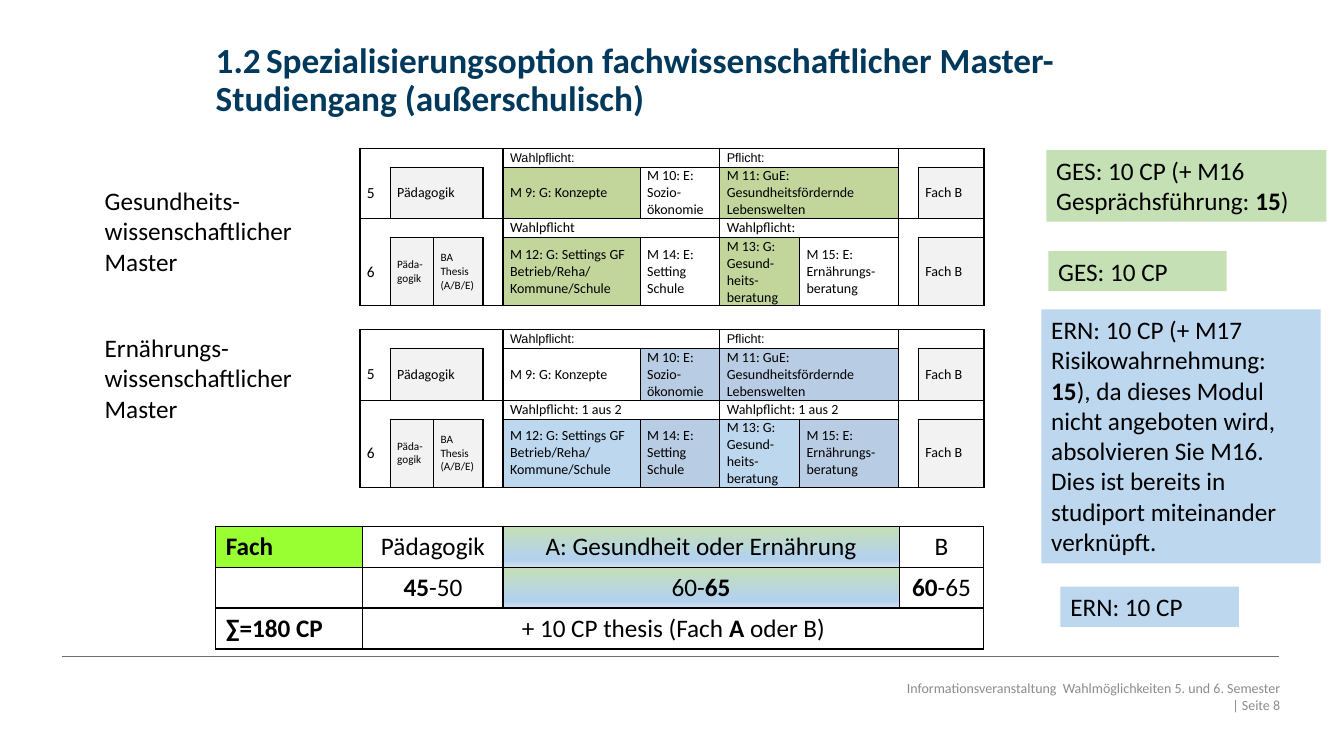
import pptx
import pptx.util
import pptx.dml.color
import pptx.enum.dml
import pptx.enum.shapes
import pptx.enum.text
import pptx.oxml
import pptx.oxml.ns
from lxml import etree

WIDE = pptx.util.Inches(13.333)
HIGH = pptx.util.Inches(7.5)
ALIGN = pptx.enum.text.PP_ALIGN
MIDDLE = pptx.enum.text.MSO_ANCHOR.MIDDLE
BLACK, GREY = "000000", "F2F2F2"
GREEN, OLIVE, SKY, STEEL = "C5E0B4", "C2D69B", "BDD7EE", "B8CCE4"
BLEND = ((0, GREEN), (74, "B5D2EC"), (83, "B5D2EC"), (100, "CEE1F2"))
MODULE_COLS = (2.25, 3.23, 3.68, 1.5, 10.2, 5.93, 5.93, 7.35, 1.5, 4.88)
MODULE_ROWS = (2.53, 6.8, 2.53, 9)
SUM_COLS = (10.95, 10.43, 29.48, 6.3)
SUM_ROWS = (5.42,) * 3
SPANS = ((0, 1), (0, 4), (0, 6), (1, 1), (1, 6), (2, 1), (2, 4), (2, 6))
EDGES = (
    {0: "LT", 1: "TB", 2: "TB", 3: "TR", 8: "LT", 9: "TRB"},
    {0: "LRB", 3: "LRB", 8: "LRB"},
)
MODULES = {
    (1, 0): "5",
    (1, 1): "Pädagogik",
    (1, 4): "M 9: G: Konzepte",
    (1, 5): "M 10: E: Sozio-ökonomie",
    (1, 6): "M 11: GuE: Gesundheitsfördernde Lebenswelten",
    (1, 9): "Fach B",
    (3, 0): "6",
    (3, 1): "Päda-gogik",
    (3, 2): "BA Thesis (A/B/E)",
    (3, 4): "M 12: G: Settings GF Betrieb/Reha/\nKommune/Schule",
    (3, 5): "M 14: E: Setting Schule",
    (3, 6): "M 13: G: Gesund-heits-beratung",
    (3, 7): "M 15: E: Ernährungs-beratung",
    (3, 9): "Fach B",
}
SIZES = {(1, 0): 11, (3, 0): 11, (3, 1): 8, (3, 2): 8}
TOTALS = (
    ("*Fach*", "Pädagogik", "A: Gesundheit oder Ernährung", "B"),
    ("", "*45*-50", "60-*65*", "*60*-65"),
    ("*∑=180 CP*", "+ 10 CP thesis (Fach *A *oder B)", "", ""),
)


def hue(code):
    """Turn a hex string into a colour."""
    return pptx.dml.color.RGBColor.from_string(code)


def area(x, y, w, h):
    """Turn percentages of the slide into lengths."""
    return [int(part * side / 100) for part, side in zip((x, y, w, h), (WIDE, HIGH) * 2)]


def write(frame, text, size, color=BLACK, align=ALIGN.LEFT, font="Calibri", bold=None):
    """Fill a text frame; asterisks enclose bold runs."""
    frame.word_wrap = True
    for i, line in enumerate(text.split("\n")):
        para = frame.add_paragraph() if i else frame.paragraphs[0]
        if "*" in line:
            for j, part in enumerate(line.split("*")):
                if part:
                    run = para.add_run()
                    run.text = part
                    run.font.bold = j % 2 == 1
        else:
            para.text = line
        para.alignment = align
        para.font.size = pptx.util.Pt(size)
        para.font.name = font
        para.font.color.rgb = hue(color)
        if bold is not None:
            para.font.bold = bold
        if not line:
            end = etree.SubElement(para._p, pptx.oxml.ns.qn("a:endParaRPr"))
            end.set("sz", str(size * 100))


def label(slide, spot, text, size=18, **style):
    """Add a plain text box."""
    box = slide.shapes.add_textbox(*area(*spot))
    write(box.text_frame, text, size, **style)
    return box.text_frame


def badge(slide, spot, fill, text):
    """Add a coloured box with text."""
    box = slide.shapes.add_shape(pptx.enum.shapes.MSO_SHAPE.RECTANGLE, *area(*spot))
    box.shadow.inherit = False
    box.fill.solid()
    box.fill.fore_color.rgb = hue(fill)
    box.line.fill.background()
    box.text_frame.vertical_anchor = pptx.enum.text.MSO_ANCHOR.TOP
    write(box.text_frame, text, 18)


def frame(cell, sides="LRTB"):
    """Draw the given sides of a cell and clear the rest."""
    props = cell._tc.get_or_add_tcPr()
    for side in "LRTB":
        line = etree.SubElement(props, pptx.oxml.ns.qn("a:ln" + side), w="12700")
        if side in sides:
            fill = etree.SubElement(line, pptx.oxml.ns.qn("a:solidFill"))
            etree.SubElement(fill, pptx.oxml.ns.qn("a:srgbClr"), val=BLACK)
        else:
            etree.SubElement(line, pptx.oxml.ns.qn("a:noFill"))


def paint(cell, fill=None):
    """Fill a cell with nothing, one colour or a list of stops."""
    if fill is None:
        cell.fill.background()
    elif isinstance(fill, str):
        cell.fill.solid()
        cell.fill.fore_color.rgb = hue(fill)
    else:
        cell.fill.gradient()
        cell.fill.gradient_angle = 270
        stops = next(cell._tc.tcPr.iter(pptx.oxml.ns.qn("a:gsLst")))
        for old in list(stops):
            stops.remove(old)
        for share, code in fill:
            stop = etree.SubElement(stops, pptx.oxml.ns.qn("a:gs"), pos=str(share * 1000))
            etree.SubElement(stop, pptx.oxml.ns.qn("a:srgbClr"), val=code)


def grid(slide, x, y, cols, rows):
    """Add an unstyled table with the given columns and rows."""
    spot = area(x, y, sum(cols), sum(rows))
    table = slide.shapes.add_table(len(rows), len(cols), *spot).table
    table.first_row = table.horz_banding = False
    for col, part in zip(table.columns, cols):
        col.width = int(part * WIDE / 100)
    for row, part in zip(table.rows, rows):
        row.height = int(part * HIGH / 100)
    return table


def plan(slide, y, heads, fills):
    """Add the module plan of semesters 5 and 6."""
    table = grid(slide, 26.78, y, MODULE_COLS, MODULE_ROWS)
    for r, c in SPANS:
        table.cell(r, c).merge(table.cell(r, c + 1))
    texts = {**MODULES, **dict(zip(((0, 4), (0, 6), (2, 4), (2, 6)), heads))}
    for r in range(len(MODULE_ROWS)):
        for c in range(len(MODULE_COLS)):
            cell, key = table.cell(r, c), (r, c)
            cell.margin_left = cell.margin_right = pptx.util.Inches(0.07)
            cell.margin_top = cell.margin_bottom = 0
            cell.vertical_anchor = MIDDLE
            frame(cell, EDGES[r % 2].get(c, "LRTB"))
            grey = GREY if r % 2 and c in (1, 2, 9) else None
            paint(cell, fills.get(key, grey))
            size = SIZES.get(key, 10) if key in texts else 8
            if r == 0 and key in texts:
                write(cell.text_frame, texts[key], 9, font="Arial")
            else:
                write(cell.text_frame, texts.get(key, ""), size)


def totals(slide):
    """Add the table of credit points."""
    table = grid(slide, 16.05, 69.6, SUM_COLS, SUM_ROWS)
    table.cell(2, 1).merge(table.cell(2, 3))
    fills = {(0, 0): "99FF33", (0, 2): BLEND, (1, 2): BLEND}
    for r, line in enumerate(TOTALS):
        for c, text in enumerate(line):
            cell = table.cell(r, c)
            frame(cell)
            paint(cell, fills.get((r, c)))
            write(cell.text_frame, text, 18, align=ALIGN.CENTER if c else ALIGN.LEFT)


def flush(text):
    """Remove the margins of a text frame and centre it vertically."""
    text.margin_left = text.margin_right = text.margin_top = text.margin_bottom = 0
    text.vertical_anchor = MIDDLE


def head(slide, text):
    """Place and format the title."""
    title = slide.shapes.title
    title.left, title.top, title.width, title.height = area(16.05, 5.47, 67.95, 10.53)
    title.text_frame.auto_size = pptx.enum.text.MSO_AUTO_SIZE.NONE
    flush(title.text_frame)
    write(title.text_frame, text, 25.2, color="00395B", bold=True)
    title.text_frame.paragraphs[0].line_spacing = 0.9


def foot(slide, text):
    """Add the footer and the rule above it."""
    x, y, w, h = area(4.65, 86.8, 90.53, 0)
    kind = pptx.enum.shapes.MSO_CONNECTOR.STRAIGHT
    rule = slide.shapes.add_connector(kind, x, y, x + w, y)
    rule.line.color.rgb = hue("6F6F6F")
    rule.line.width = pptx.util.Pt(0.75)
    etree.SubElement(rule._element.spPr, pptx.oxml.ns.qn("a:effectLst"))
    spot = (45.3, 88, 49.95, 8.13)
    flush(label(slide, spot, text, 10, color="8C8C8C", align=ALIGN.RIGHT))


def main():
    """Build the slide and save it."""
    deck = pptx.Presentation()
    deck.slide_width, deck.slide_height = WIDE, HIGH
    slide = deck.slides.add_slide(deck.slide_layouts[5])
    foot(slide, "Informationsveranstaltung  Wahlmöglichkeiten 5. und 6. Semester\v| Seite 8")
    head(slide, "1.2\tSpezialisierungsoption fachwissenschaftlicher Master-\tStudiengang (außerschulisch)")
    plan(slide, 19.6, ("Wahlpflicht:", "Pflicht:", "Wahlpflicht", "Wahlpflicht:"),
         dict.fromkeys(((1, 4), (1, 6), (3, 4), (3, 6)), OLIVE))
    plan(slide, 43.6, ("Wahlpflicht:", "Pflicht:") + ("Wahlpflicht: 1 aus 2",) * 2,
         {**dict.fromkeys(((1, 5), (1, 6), (3, 5), (3, 7)), STEEL), (3, 4): SKY, (3, 6): SKY})
    label(slide, (7.05, 23.87, 15.53, 13.47), "Gesundheits-wissenschaftlicher Master")
    label(slide, (7.05, 43.33, 15.53, 13.47), "Ernährungs-wissenschaftlicher Master")
    totals(slide)
    badge(slide, (78.9, 77.6, 13.28, 5.33), SKY, "ERN: 10 CP")
    badge(slide, (77.85, 19.87, 20.85, 9.47), GREEN,
          "GES: 10 CP (+ M16 Gesprächsführung: *15*)")
    badge(slide, (78, 33.2, 13.28, 5.33), GREEN, "GES: 10 CP")
    badge(slide, (77.48, 40.93, 20.78, 33.6), SKY,
          "ERN: 10 CP (+ M17 Risikowahrnehmung: *15*), da dieses Modul nicht angeboten wird, "
          "absolvieren Sie M16. Dies ist bereits in studiport miteinander verknüpft.")
    deck.save("out.pptx")


if __name__ == "__main__":
    main()
